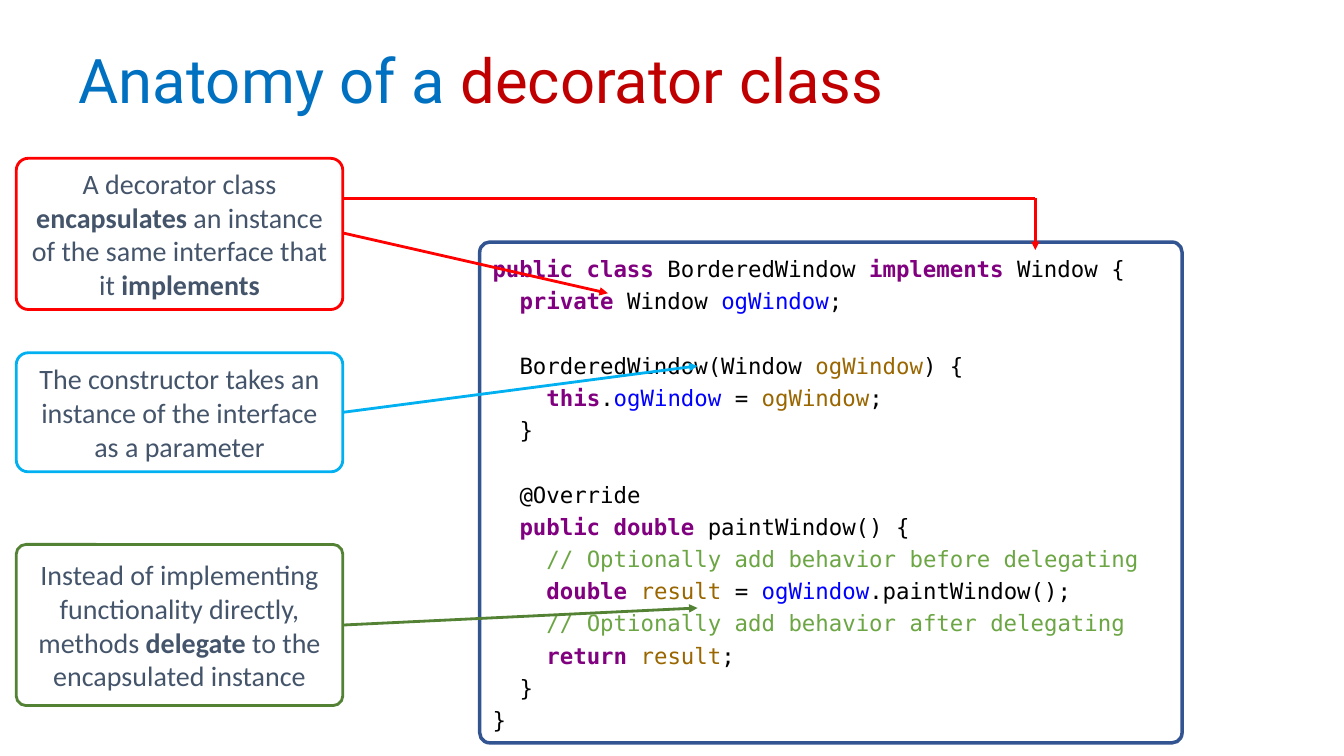
from dataclasses import dataclass
from typing import Any, NamedTuple

from lxml import etree
from pptx import Presentation
from pptx import util as u
from pptx.dml.color import RGBColor
from pptx.enum import shapes, text
from pptx.oxml.ns import qn
from pptx.slide import Slide


@dataclass(frozen=True)
class Theme:
    white: str = "FFFFFF"
    title_blue: str = "0070C0"
    title_red: str = "C00000"
    frame: str = "325491"
    red: str = "FF0000"
    cyan: str = "00B0F0"
    green: str = "548235"
    note: str = "44546A"
    plain: str = "000000"
    keyword: str = "800080"
    field: str = "0000FF"
    local: str = "996600"
    comment: str = "6CA644"
    title_font: str = "Roboto"
    note_font: str = "Calibri"
    code_font: str = "DejaVu Sans Mono"
    title_size: int = 44
    note_size: int = 20
    code_size: int = 16
    frame_width: float = 2.5
    line_width: float = 2


T = Theme()
CODE_INDENT = u.Cm(0.68)
CODE_GAP = u.Cm(0.81)
NOTE_LEFT, NOTE_WIDTH = 0.41, 8.23


class Run(NamedTuple):
    text: str
    color: str = T.plain
    bold: bool = False


class Box(NamedTuple):
    left: float
    top: float
    width: float
    height: float


class Line(NamedTuple):
    x1: float
    y1: float
    x2: float
    y2: float
    head: bool = True


class CodeLine(NamedTuple):
    level: int
    runs: list[Run]
    gap: bool = False


class Callout(NamedTuple):
    top: float
    height: float
    corner: float
    color: str
    runs: list[Run]
    lines: list[Line]


def kw(s: str) -> Run:
    return Run(s, T.keyword, True)


def field(s: str) -> Run:
    return Run(s, T.field)


def local(s: str) -> Run:
    return Run(s, T.local)


def comment(s: str) -> Run:
    return Run(s, T.comment)


def note(s: str, bold: bool = False) -> Run:
    return Run(s, T.note, bold)


CODE = [
    CodeLine(0, [kw("public class "), Run("BorderedWindow "), kw("implements"), Run(" Window {")]),
    CodeLine(1, [kw("private "), Run("Window "), field("ogWindow"), Run(";")]),
    CodeLine(1, [Run("BorderedWindow(Window "), local("ogWindow"), Run(") {")], gap=True),
    CodeLine(2, [kw("this"), Run("."), field("ogWindow "), Run("= "), local("ogWindow"), Run(";")]),
    CodeLine(1, [Run("}")]),
    CodeLine(1, [Run("@Override")], gap=True),
    CodeLine(1, [kw("public double "), Run("paintWindow() {")]),
    CodeLine(2, [comment("// Optionally add behavior before delegating")]),
    CodeLine(2, [kw("double "), local("result"), Run(" = "), field("ogWindow"), Run(".paintWindow();")]),
    CodeLine(2, [comment("// Optionally add behavior after delegating")]),
    CodeLine(2, [kw("return "), local("result"), Run(";")]),
    CodeLine(1, [Run("}")]),
    CodeLine(0, [Run("}")]),
]

CALLOUTS = [
    Callout(3.99, 3.81, 0.08, T.red,
            [note("A decorator class "), note("encapsulates", True),
             note(" an instance of the same interface that it "), note("implements", True)],
            [Line(8.43, 5, 26.09, 5, head=False), Line(26.09, 5, 26.09, 6.3),
             Line(8.64, 5.87, 15.32, 7.39)]),
    Callout(8.89, 3, 0.1, T.cyan,
            [note("The constructor takes an instance of the interface as a parameter")],
            [Line(8.64, 10.39, 17.58, 9.22)]),
    Callout(13.72, 4.06, 0.06, T.green,
            [note("Instead of implementing functionality directly, methods "),
             note("delegate", True), note(" to the encapsulated instance")],
            [Line(8.64, 15.75, 17.58, 15.32)]),
]


def apply(obj: Any, fmt: dict[str, Any]) -> None:
    for name, value in fmt.items():
        setattr(obj, name, value)


def place(box: Box) -> dict[str, u.Length]:
    return {name: u.Cm(value) for name, value in box._asdict().items()}


def add_runs(p: Any, runs: list[Run], font: str, size: int) -> None:
    for run in runs:
        r = p.add_run()
        r.text = run.text
        apply(r.font, {"name": font, "size": u.Pt(size), "bold": run.bold})
        r.font.color.rgb = RGBColor.from_string(run.color)


def add_panel(s: Slide, box: Box, corner: float, color: str, width: float, anchor: Any) -> Any:
    sp = s.shapes.add_shape(shapes.MSO_SHAPE.ROUNDED_RECTANGLE, **place(box))
    sp.adjustments[0] = corner
    sp.shadow.inherit = False
    sp.fill.solid()
    sp.fill.fore_color.rgb = RGBColor.from_string(T.white)
    sp.line.color.rgb = RGBColor.from_string(color)
    sp.line.width = u.Pt(width)
    apply(sp.text_frame, {"word_wrap": True, "vertical_anchor": anchor,
                          "auto_size": text.MSO_AUTO_SIZE.SHAPE_TO_FIT_TEXT})
    return sp.text_frame


def add_line(s: Slide, line: Line, color: str) -> None:
    ends = [u.Cm(v) for v in line[:4]]
    cx = s.shapes.add_connector(shapes.MSO_CONNECTOR.STRAIGHT, *ends)
    cx.line.color.rgb = RGBColor.from_string(color)
    cx.line.width = u.Pt(T.line_width)
    sp_pr = cx._element.spPr
    if line.head:
        etree.SubElement(sp_pr.find(qn("a:ln")), qn("a:tailEnd"), type="triangle")
    etree.SubElement(sp_pr, qn("a:effectLst"))


def add_title(s: Slide) -> None:
    sp = s.shapes.title
    apply(sp, place(Box(1.73, 1.02, 29.79, 2.16)))
    apply(sp.text_frame, {"word_wrap": True, "auto_size": text.MSO_AUTO_SIZE.NONE,
                          "vertical_anchor": text.MSO_ANCHOR.MIDDLE})
    p = sp.text_frame.paragraphs[0]
    apply(p, {"alignment": text.PP_ALIGN.LEFT, "line_spacing": 0.9})
    add_runs(p, [Run("Anatomy of a ", T.title_blue), Run("decorator class", T.title_red)],
             T.title_font, T.title_size)


def add_code(s: Slide) -> None:
    tf = add_panel(s, Box(12.09, 6.1, 17.7, 12.62), 0.02, T.frame, T.frame_width,
                   text.MSO_ANCHOR.TOP)
    for i, line in enumerate(CODE):
        p = tf.add_paragraph() if i else tf.paragraphs[0]
        apply(p, {"alignment": text.PP_ALIGN.LEFT, "line_spacing": 1.2,
                  "space_before": CODE_GAP if line.gap else u.Pt(0)})
        p._p.get_or_add_pPr().set("marL", str(line.level * CODE_INDENT))
        add_runs(p, line.runs, T.code_font, T.code_size)


def add_callout(s: Slide, c: Callout) -> None:
    for line in c.lines:
        add_line(s, line, c.color)
    tf = add_panel(s, Box(NOTE_LEFT, c.top, NOTE_WIDTH, c.height), c.corner, c.color,
                   T.line_width, text.MSO_ANCHOR.MIDDLE)
    p = tf.paragraphs[0]
    p.alignment = text.PP_ALIGN.CENTER
    add_runs(p, c.runs, T.note_font, T.note_size)


def main() -> None:
    prs = Presentation()
    apply(prs, {"slide_width": u.Cm(33.87), "slide_height": u.Cm(19.05)})
    s = prs.slides.add_slide(prs.slide_layouts[5])
    add_title(s)
    add_code(s)
    for c in CALLOUTS:
        add_callout(s, c)
    prs.save("out.pptx")


if __name__ == "__main__":
    main()
